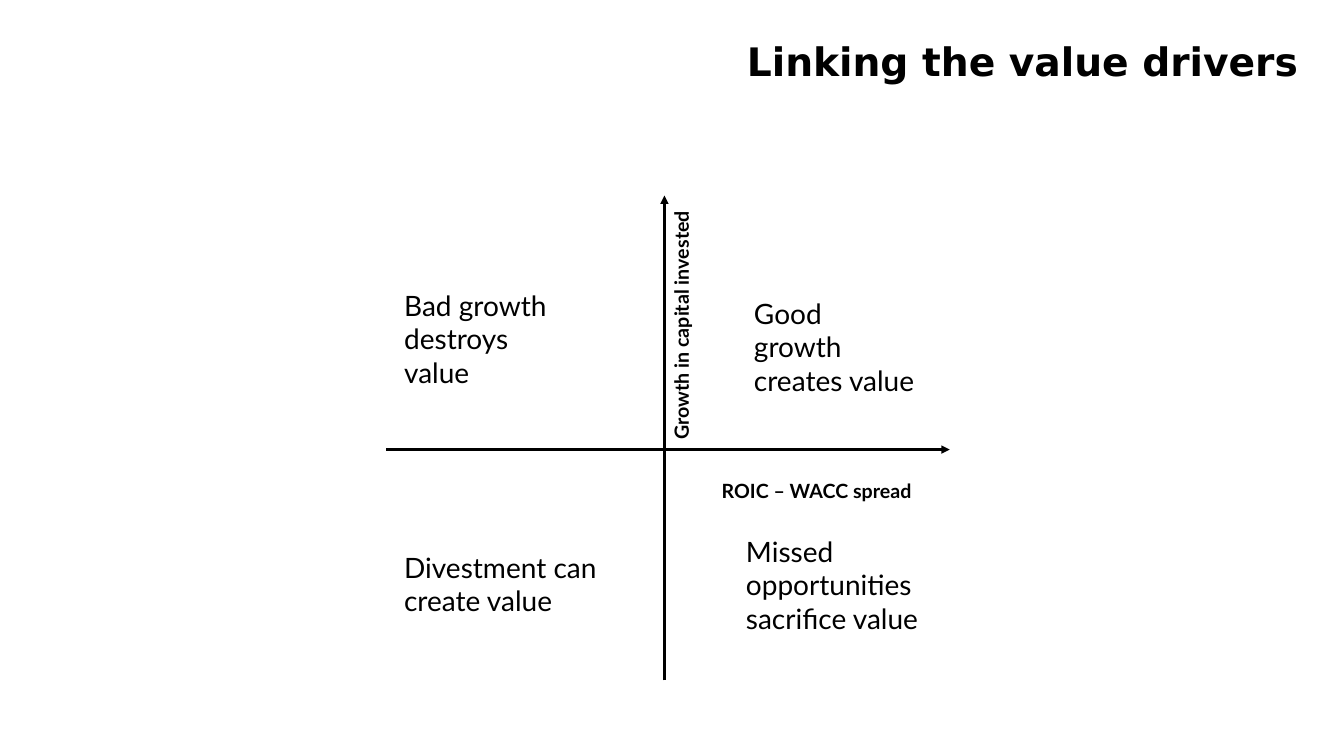
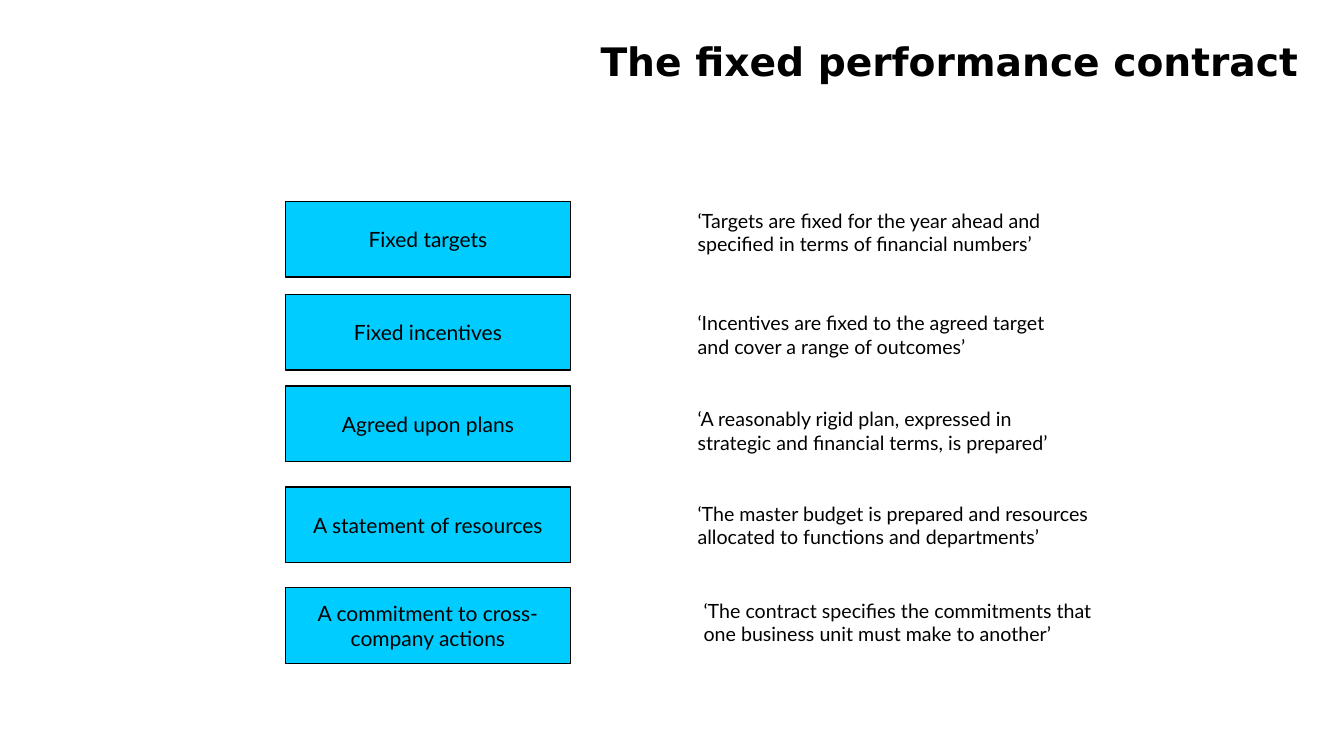
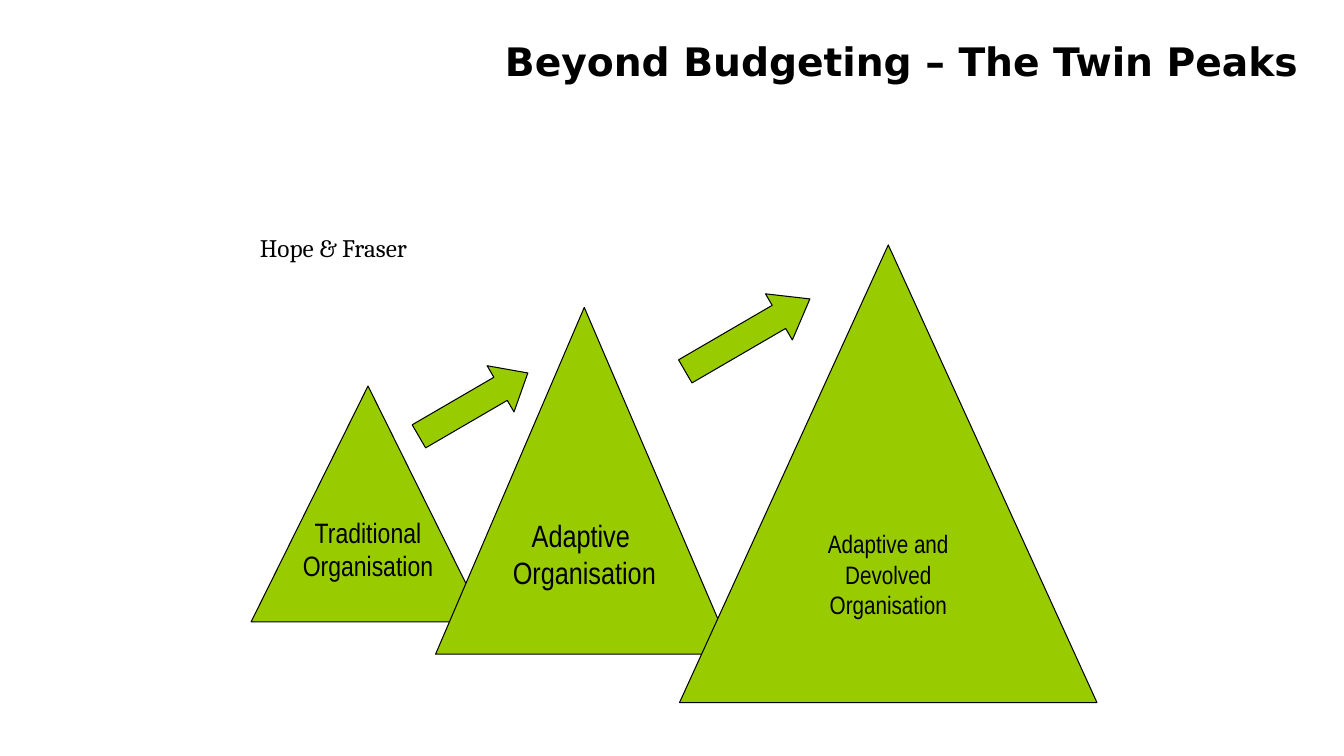
import pptx
import pptx.util
import pptx.dml.color
import pptx.enum.shapes
import pptx.enum.text
import pptx.oxml.ns
import lxml.etree

Inches = pptx.util.Inches
Pt = pptx.util.Pt
SHAPE = pptx.enum.shapes.MSO_SHAPE
ALIGN = pptx.enum.text.PP_ALIGN
ANCHOR = pptx.enum.text.MSO_ANCHOR
qn = pptx.oxml.ns.qn

BLACK = pptx.dml.color.RGBColor(0x00, 0x00, 0x00)
WHITE = pptx.dml.color.RGBColor(0xFF, 0xFF, 0xFF)
CYAN = pptx.dml.color.RGBColor(0x00, 0xCC, 0xFF)
GREEN = pptx.dml.color.RGBColor(0x99, 0xCC, 0x00)

TITLE_FONT = "DejaVu Sans"
BODY_FONT = "Lato"
PEAK_FONT = "Arial Narrow"
SOURCE_FONT = "Cambria"


def write(frame, text, size, font=BODY_FONT, bold=False, align=ALIGN.LEFT,
          anchor=ANCHOR.TOP, wrap=True, bottom=0.05):
    frame.word_wrap = wrap
    frame.vertical_anchor = anchor
    frame.margin_bottom = Inches(bottom)
    for index, line in enumerate(text.split("\n")):
        paragraph = frame.add_paragraph() if index else frame.paragraphs[0]
        paragraph.alignment = align
        run = paragraph.add_run()
        run.text = line
        run.font.size = Pt(size)
        run.font.name = font
        run.font.bold = bold
        run.font.color.rgb = BLACK


def add_label(slide, text, left, top, width, height, size, rotation=0, **style):
    label = slide.shapes.add_textbox(Inches(left), Inches(top), Inches(width), Inches(height))
    label.rotation = rotation
    write(label.text_frame, text, size, **style)


def add_block(slide, preset, left, top, width, height, fill, line_width):
    block = slide.shapes.add_shape(preset, Inches(left), Inches(top), Inches(width), Inches(height))
    block.shadow.inherit = False
    block.fill.solid()
    block.fill.fore_color.rgb = fill
    block.line.color.rgb = BLACK
    block.line.width = Pt(line_width)
    return block


def add_axis(slide, x1, y1, x2, y2):
    axis = slide.shapes.add_connector(pptx.enum.shapes.MSO_CONNECTOR.STRAIGHT,
                                      Inches(x1), Inches(y1), Inches(x2), Inches(y2))
    axis.line.color.rgb = BLACK
    axis.line.width = Pt(2)
    lxml.etree.SubElement(axis.line._get_or_add_ln(), qn("a:tailEnd"), type="triangle")
    lxml.etree.SubElement(axis._element.spPr, qn("a:effectLst"))


def add_titled_slide(deck, title):
    slide = deck.slides.add_slide(deck.slide_layouts[6])
    slide.background.fill.solid()
    slide.background.fill.fore_color.rgb = WHITE
    add_label(slide, title, 0.67, 0.3, 12.3, 0.61, 28, font=TITLE_FONT, bold=True,
              align=ALIGN.RIGHT, anchor=ANCHOR.MIDDLE)
    return slide


def add_value_matrix(slide, left, top, width, height):
    growth_x, spread_y = left + 2.76, top + 2.52
    add_axis(slide, left, spread_y, left + width, spread_y)
    add_axis(slide, growth_x, top + height, growth_x, top)
    add_label(slide, "ROIC – WACC spread", growth_x + 0.47, spread_y + 0.24, 2.44, 0.33, 14, bold=True)
    add_label(slide, "Growth in capital invested", growth_x - 1.25, spread_y - 1.58, 2.83, 0.33, 14,
              rotation=270, bold=True)
    quadrants = [
        ("Bad growth destroys value", -2.68, -1.65, 1.89, 1.1),
        ("Good growth creates value", 0.79, -1.57, 1.8, 1.1),
        ("Divestment can create value", -2.68, 0.95, 2.2, 0.77),
        ("Missed opportunities sacrifice value", 0.71, 0.79, 2.44, 1.1),
    ]
    for text, dx, dy, label_width, label_height in quadrants:
        add_label(slide, text, growth_x + dx, spread_y + dy, label_width, label_height, 20)


def add_contract_terms(slide, left, top):
    terms = [
        ("Fixed targets", 0,
         "‘Targets are fixed for the year ahead and specified in terms of financial numbers’",
         3.99, 0.02, 3.86),
        ("Fixed incentives", 0.92,
         "‘Incentives are fixed to the agreed target and cover a range of outcomes’",
         3.99, 1.04, 3.78),
        ("Agreed upon plans", 1.83,
         "‘A reasonably rigid plan, expressed in strategic and financial terms, is prepared’",
         3.99, 1.99, 3.86),
        ("A statement of resources", 2.83,
         "‘The master budget is prepared and resources allocated to functions and departments’",
         3.99, 2.93, 4.33),
        ("A commitment to cross-\ncompany actions", 3.83,
         "‘The contract specifies the commitments that one business unit must make to another’",
         4.05, 3.89, 4.1),
    ]
    for term, term_dy, meaning, meaning_dx, meaning_dy, meaning_width in terms:
        term_box = add_block(slide, SHAPE.RECTANGLE, left, top + term_dy, 2.83, 0.75, CYAN, 1)
        write(term_box.text_frame, term, 15, align=ALIGN.CENTER, anchor=ANCHOR.MIDDLE, wrap=False)
        add_label(slide, meaning, left + meaning_dx, top + meaning_dy, meaning_width, 0.57, 14)


def add_peaks(slide, left, top):
    peaks = [
        ("Traditional\nOrganisation", 0, 1.4, 2.32, 2.34, 20),
        ("Adaptive \nOrganisation", 1.83, 0.62, 2.95, 3.44, 22),
        ("Adaptive and\nDevolved\nOrganisation", 4.25, 0, 4.14, 4.54, 18),
    ]
    for text, dx, dy, width, height, size in peaks:
        peak = add_block(slide, SHAPE.ISOSCELES_TRIANGLE, left + dx, top + dy, width, height, GREEN, 0.75)
        write(peak.text_frame, text, size, font=PEAK_FONT, align=ALIGN.CENTER,
              anchor=ANCHOR.MIDDLE, wrap=False, bottom=0.33)
    for dx, dy, length, head in [(1.58, 1.32, 1.25, 0.59), (4.21, 0.63, 1.43, 0.67)]:
        climb = add_block(slide, SHAPE.RIGHT_ARROW, left + dx, top + dy, length, 0.53, GREEN, 0.75)
        climb.adjustments[1] = head
        climb.rotation = 329.8
    add_label(slide, "Hope & Fraser", left - 0.01, top - 0.17, 1.8, 0.4, 18, font=SOURCE_FONT)


def main():
    deck = pptx.Presentation()
    deck.slide_width = Inches(13.33)
    deck.slide_height = Inches(7.5)
    add_value_matrix(add_titled_slide(deck, "Linking the value drivers"), 3.83, 1.94, 5.59, 4.81)
    add_contract_terms(add_titled_slide(deck, "The fixed performance contract"), 2.83, 2)
    add_peaks(add_titled_slide(deck, "Beyond Budgeting – The Twin Peaks"), 2.49, 2.43)
    deck.save("out.pptx")


if __name__ == "__main__":
    main()
